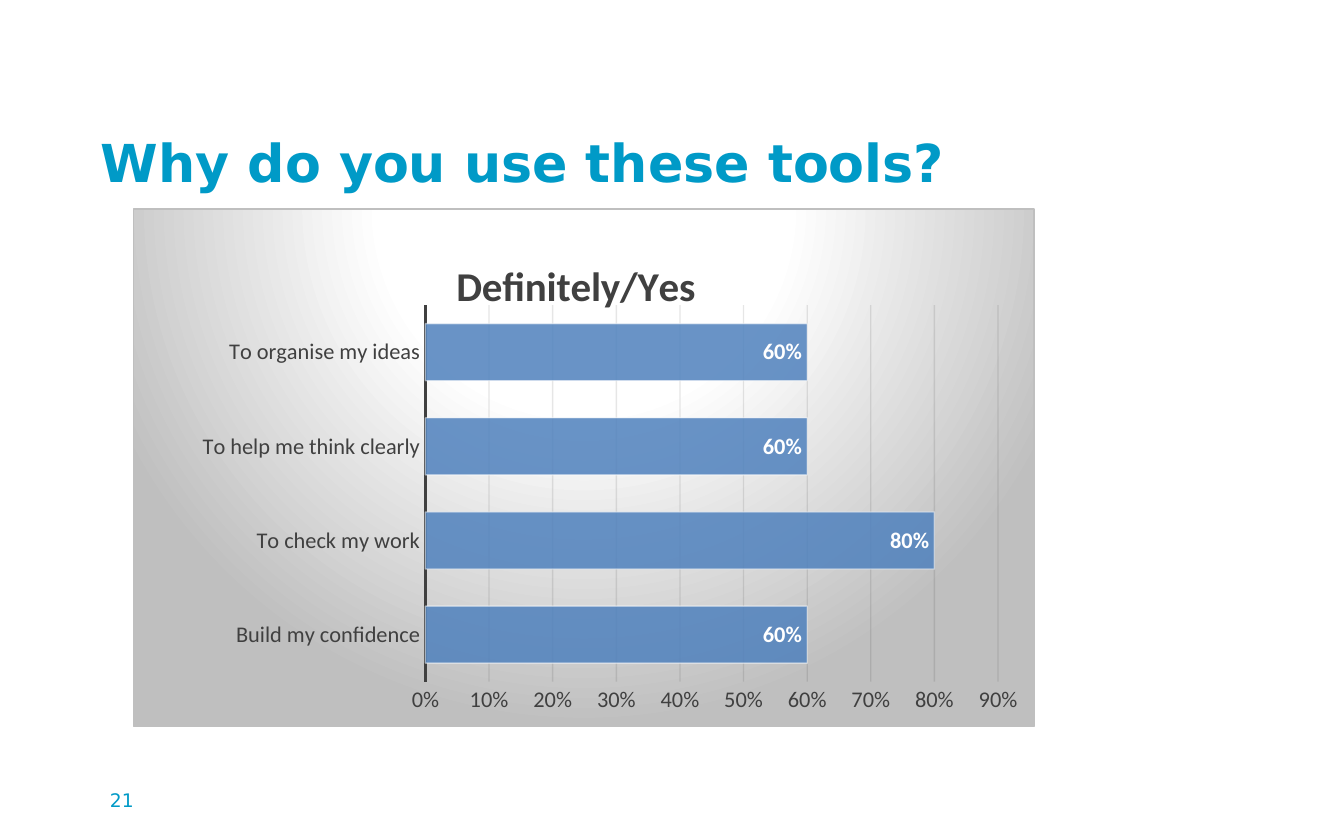
from typing import NamedTuple

from lxml.etree import SubElement
from pptx import Presentation
from pptx.chart.data import CategoryChartData
from pptx.dml.color import RGBColor
from pptx.enum.chart import XL_CHART_TYPE as ChartType
from pptx.enum.chart import XL_LABEL_POSITION as LabelPosition
from pptx.enum.chart import XL_TICK_MARK as TickMark
from pptx.enum.text import MSO_ANCHOR as Anchor
from pptx.oxml import parse_xml
from pptx.oxml.ns import nsdecls, qn
from pptx.util import Inches, Pt

TEAL, WHITE, DARK, SILVER = "009AC7", "FFFFFF", "404040", "BFBFBF"
HEADING_FONT, CHART_FONT = "DejaVu Sans", "Calibri"


class Reason(NamedTuple):
    label: str
    share: float


REASONS = [
    Reason("Build my confidence", 0.6),
    Reason("To check my work", 0.8),
    Reason("To help me think clearly", 0.6),
    Reason("To organise my ideas", 0.6),
]


def rgb(value: str) -> RGBColor:
    return RGBColor.from_string(value)


def style_font(font, name: str, size: float, color: str, bold: bool = False) -> None:
    font.name, font.size, font.bold = name, Pt(size), bold
    font.color.rgb = rgb(color)


def write(shape, text: str, *, size: float, bold: bool = False, anchor=Anchor.TOP) -> None:
    frame = shape.text_frame
    frame.word_wrap = True
    frame.vertical_anchor = anchor
    span = frame.paragraphs[0].add_run()
    span.text = text
    style_font(span.font, HEADING_FONT, size, TEAL, bold)


def style_line(line, color: str, width: float, opacity: int = 100) -> None:
    line.color.rgb = rgb(color)
    line.width = Pt(width)
    set_opacity(line.fill, opacity, line)


def set_opacity(fill, percent: int, owner) -> None:
    """Set the opacity of a solid fill held by a line or a shape format."""
    if percent < 100:
        properties = owner.format_element if hasattr(owner, "format_element") else fill._xPr
        color = properties.find(qn("a:solidFill")).find(qn("a:srgbClr"))
        SubElement(color, qn("a:alpha")).set("val", str(percent * 1000))


def make_layout(inner: bool = False, **position: float):
    """Return a manual chart layout, given in fractions of the chart."""
    target = '<c:layoutTarget val="inner"/>' if inner else ""
    values = "".join(f'<c:{key} val="{value}"/>' for key, value in position.items())
    return parse_xml(
        f'<c:layout {nsdecls("c")}><c:manualLayout>{target}'
        f'<c:xMode val="edge"/><c:yMode val="edge"/>{values}</c:manualLayout></c:layout>'
    )


def remove_layout(parent) -> None:
    for old in parent.findall(qn("c:layout")):
        parent.remove(old)


def fill_background(chart) -> None:
    """Give the chart area a circular gradient and a thin border."""
    stops = "".join(
        f'<a:gs pos="{place * 1000}"><a:srgbClr val="{color}"/></a:gs>'
        for place, color in [(0, WHITE), (39, WHITE), (100, SILVER)]
    )
    area = parse_xml(
        f'<c:spPr {nsdecls("c", "a")}><a:gradFill><a:gsLst>{stops}</a:gsLst>'
        '<a:path path="circle">'
        '<a:fillToRect l="50000" t="-80000" r="50000" b="180000"/></a:path></a:gradFill>'
        f'<a:ln w="{Pt(0.75)}"><a:solidFill><a:srgbClr val="{SILVER}"/></a:solidFill></a:ln>'
        "</c:spPr>"
    )
    chart._chartSpace.find(qn("c:chart")).addnext(area)


def add_reasons_chart(page) -> None:
    data = CategoryChartData(number_format="0%")
    data.categories = [reason.label for reason in REASONS]
    data.add_series("Definitely/Yes", [reason.share for reason in REASONS])
    chart = page.shapes.add_chart(
        ChartType.BAR_CLUSTERED, Inches(0.99), Inches(1.55), Inches(6.71), Inches(3.86), data
    ).chart
    style_font(chart.font, CHART_FONT, 10, "000000")
    fill_background(chart)
    chart.has_legend = False

    chart.has_title = True
    span = chart.chart_title.text_frame.paragraphs[0].add_run()
    span.text = "Definitely/Yes"
    style_font(span.font, CHART_FONT, 22, DARK, bold=True)
    title = chart.chart_title._element
    remove_layout(title)
    title.find(qn("c:tx")).addnext(make_layout(x=0.35, y=0.08))

    plot_area = chart._chartSpace.chart.plotArea
    remove_layout(plot_area)
    plot_area.insert(0, make_layout(inner=True, x=0.324, y=0.186, w=0.636, h=0.728))

    for axis in (chart.category_axis, chart.value_axis):
        axis.major_tick_mark = axis.minor_tick_mark = TickMark.NONE
        style_font(axis.tick_labels.font, CHART_FONT, 12, DARK)
    chart.category_axis.has_major_gridlines = False
    style_line(chart.category_axis.format.line, DARK, 1.5)

    scale = chart.value_axis
    scale.minimum_scale, scale.maximum_scale, scale.major_unit = 0, 0.9, 0.1
    scale.tick_labels.number_format = "0%"
    scale.tick_labels.number_format_is_linked = False
    scale.format.line.fill.background()
    scale.has_major_gridlines = True
    style_line(scale.major_gridlines.format.line, "0D0D0D", 0.75, opacity=10)

    plot = chart.plots[0]
    plot.gap_width = 65
    plot.vary_by_categories = False
    bars = plot.series[0]
    bars.format.fill.solid()
    bars.format.fill.fore_color.rgb = rgb("4F81BD")
    set_opacity(bars.format.fill, 85, bars.format)
    style_line(bars.format.line, WHITE, 0.75, opacity=50)

    labels = bars.data_labels
    labels.show_value = True
    labels.position = LabelPosition.INSIDE_END
    labels.number_format = "0%"
    labels.number_format_is_linked = False
    style_font(labels.font, CHART_FONT, 12, WHITE, bold=True)


def main() -> None:
    deck = Presentation()
    deck.slide_width, deck.slide_height = Inches(10), Inches(6.25)
    page = deck.slides.add_slide(deck.slide_layouts[5])

    title = page.shapes.title
    title.left, title.top = Inches(0.65), Inches(0.88)
    title.width, title.height = Inches(8.78), Inches(0.65)
    write(title, "Why do you use these tools?", size=28, bold=True, anchor=Anchor.MIDDLE)
    title.text_frame.paragraphs[0].alignment = 1

    add_reasons_chart(page)

    number = page.shapes.add_textbox(Inches(0.72), Inches(5.82), Inches(0.7), Inches(0.43))
    write(number, "21", size=10)

    deck.save("out.pptx")


if __name__ == "__main__":
    main()
